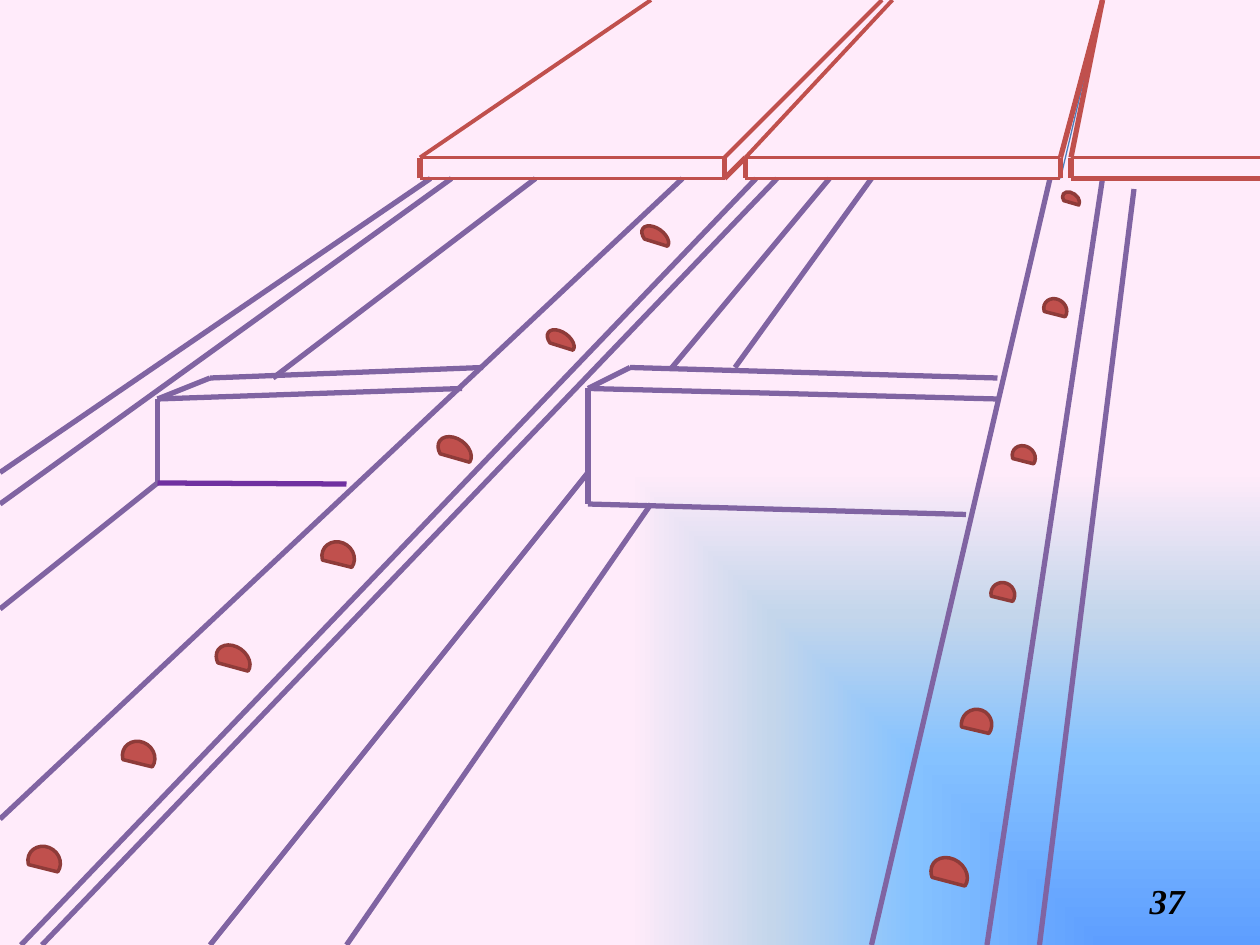
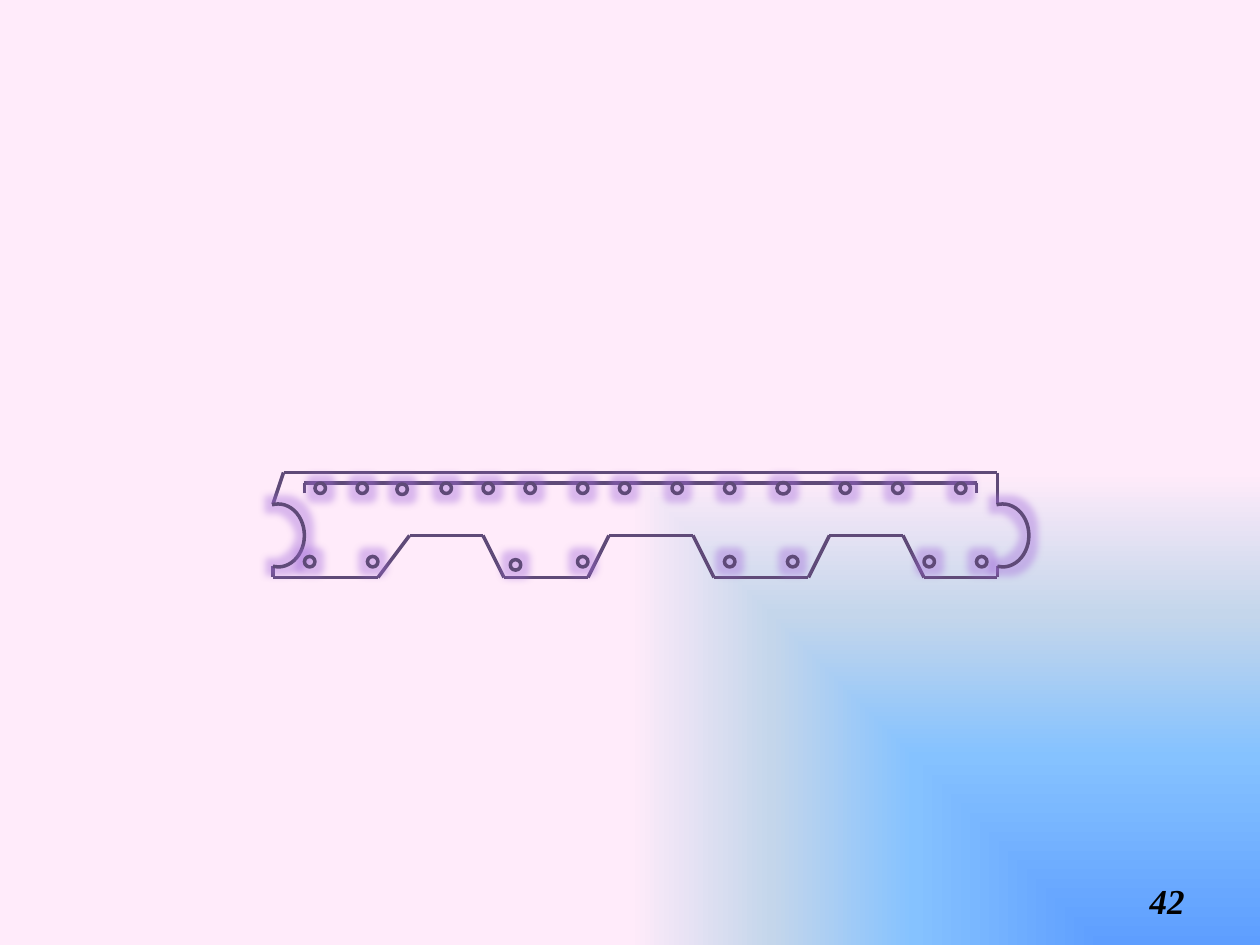
from dataclasses import dataclass
from typing import NamedTuple

from lxml.etree import SubElement
from pptx import Presentation
from pptx.dml.color import RGBColor
from pptx.enum.shapes import MSO_CONNECTOR, MSO_SHAPE
from pptx.enum.text import MSO_ANCHOR, PP_ALIGN
from pptx.oxml.ns import qn
from pptx.util import Inches, Pt

COLUMNS, ROWS = 120, 90
CELL = Inches(10) / COLUMNS


@dataclass(frozen=True)
class Theme:
    background: tuple = ((0, "5E9EFF"), (40, "85C2FF"), (70, "C4D6EB"), (100, "FFEBFA"))
    beam: str = "8064A2"
    beam_base: str = "7030A0"
    slab: str = "C0504D"
    gap: str = "4B7EBC"
    bolt_edge: str = "8E3B39"
    section: str = "5F4A78"
    glow: str = "A36BDB"
    text: str = "000000"
    font: str = "Times New Roman"
    number_size: float = 20
    heavy: float = 3
    medium: float = 2.25
    fine: float = 2
    hair: float = 0.75


THEME = Theme()


class Stroke(NamedTuple):
    """Joined straight lines through grid points (column, row)."""
    color: str
    width: float
    points: tuple


class Disc(NamedTuple):
    """Centre and size of a round part, in grid cells."""
    column: float
    row: float
    width: float = 1
    height: float = 1


def strokes(color: str, width: float, *paths: tuple) -> list[Stroke]:
    return [Stroke(color, width, points) for points in paths]


# Slabs resting on bolted beams
FLOOR = [
    *strokes(
        THEME.beam, THEME.heavy,
        # Beam edges running towards the viewer
        ((0, 58), (15, 46)), ((43, 17), (0, 48)), ((41, 17), (0, 45)),
        ((33, 90), (62, 48)), ((72, 17), (2, 90)), ((65, 17), (0, 78)),
        ((51, 17), (26, 36)), ((100, 17), (83, 90)), ((70, 35), (83, 17)),
        ((74, 17), (4, 90)), ((20, 90), (56, 45)), ((79, 17), (64, 35)),
        ((105, 17), (94, 90)), ((108, 18), (99, 90)),
        # Cross beams
        ((44, 37), (15, 38), (15, 46)), ((15, 38), (20, 36), (46, 35)),
        ((95, 38), (56, 37), (56, 48), (92, 49)), ((56, 37), (60, 35), (95, 36)),
    ),
    *strokes(THEME.beam_base, THEME.heavy, ((15, 46), (33, 46.1))),
    *strokes(
        THEME.slab, THEME.medium,
        ((40, 17), (69, 17)), ((62, 0), (40, 15), (69, 15), (84, 0)),
        ((71, 17), (101, 17)), ((85, 0), (71, 15), (101, 15)),
        ((102, 15), (120, 15)),
    ),
    *strokes(THEME.gap, THEME.hair, ((101, 17), (105, 0))),
    *strokes(
        THEME.slab, THEME.heavy,
        ((40, 17), (40, 15)), ((69, 15), (69, 17), (71, 15), (71, 17)),
        ((101, 17), (101, 15), (105, 0), (102, 15), (102, 17), (120, 17)),
    ),
]
BOLT_TURN = 125.9
BOLTS = [
    Disc(4.2, 82.1, 2.9, 3.2), Disc(13.2, 72.1, 2.9, 3.2), Disc(22.2, 62.9, 2.6, 3.5),
    Disc(32.2, 53.1, 2.9, 3.2), Disc(43.3, 43, 2.4, 3.5), Disc(53.4, 32.5, 1.7, 2.9),
    Disc(62.4, 22.6, 1.7, 2.9), Disc(90.4, 83.3, 3, 3.7), Disc(93, 69, 2.9, 2.9),
    Disc(95.5, 56.6, 2.2, 2.3), Disc(97.5, 43.5, 2, 2.3), Disc(100.5, 29.5, 2, 2.3),
    Disc(102, 19, 1.2, 1.8),
]

# Cross-section of one ribbed slab
SECTION = strokes(
    THEME.section, THEME.fine,
    ((26, 48), (27, 45), (95, 45), (95, 48)),
    ((26, 53.9), (26, 55), (36, 55), (39, 51), (46, 51), (48, 55), (56, 55),
     (58, 51), (66, 51), (68, 55), (77, 55), (79, 51), (86, 51), (88, 55),
     (95, 55), (95, 53.9)),
    ((29, 47), (29, 46), (93, 46), (93, 47)),
)
JOINTS = [Disc(column, 51, 5, 6) for column in (26.5, 95.5)]
JOINT_ANGLES = (155.23, 59.84)
TOP_BARS = (30.5, 34.5, 42.5, 46.5, 50.5, 55.5, 59.5, 64.5, 69.5, 80.5, 85.5, 91.5)
RIB_BARS = (29.5, 35.5, 55.5, 69.5, 75.5, 88.5, 93.5)
BARS = [
    *(Disc(column, 46.5) for column in TOP_BARS),
    *(Disc(column, 53.5) for column in RIB_BARS),
    Disc(38.3, 46.6), Disc(74.6, 46.5, 1.2, 1.1), Disc(49.1, 53.8),
]


def cells(count: float) -> int:
    return round(count * CELL)


def paint_background(master) -> None:
    """Gradient spreading from the bottom right corner."""
    master.background.fill.gradient()
    gradient = next(master.element.iter(qn("a:gradFill")))
    for child in list(gradient):
        gradient.remove(child)
    stops = SubElement(gradient, qn("a:gsLst"))
    for position, color in THEME.background:
        stop = SubElement(stops, qn("a:gs"), pos=str(position * 1000))
        SubElement(stop, qn("a:srgbClr"), val=color)
    spread = SubElement(gradient, qn("a:path"), path="rect")
    SubElement(spread, qn("a:fillToRect"), l="100000", t="100000")


def draw_strokes(page, items: list[Stroke]) -> None:
    for stroke in items:
        for start, end in zip(stroke.points, stroke.points[1:]):
            line = page.shapes.add_connector(
                MSO_CONNECTOR.STRAIGHT, *map(cells, (*start, *end)))
            line.line.color.rgb = RGBColor.from_string(stroke.color)
            line.line.width = Pt(stroke.width)
            SubElement(line.element.spPr, qn("a:effectLst"))


def draw_disc(page, kind, disc: Disc, *, edge: str, fill: str = "",
              turn: float = 0, angles: tuple = (), glow: float = 0):
    left, top = disc.column - disc.width / 2, disc.row - disc.height / 2
    shape = page.shapes.add_shape(
        kind, *map(cells, (left, top, disc.width, disc.height)))
    shape.rotation = turn
    for index, angle in enumerate(angles):
        shape.adjustments[index] = angle
    if fill:
        shape.fill.solid()
        shape.fill.fore_color.rgb = RGBColor.from_string(fill)
    else:
        shape.fill.background()
    shape.line.color.rgb = RGBColor.from_string(edge)
    shape.line.width = Pt(THEME.fine)
    shape.shadow.inherit = False
    if glow:
        effects = shape.element.spPr.find(qn("a:effectLst"))
        halo = SubElement(effects, qn("a:glow"), rad=str(Pt(glow)))
        color = SubElement(halo, qn("a:srgbClr"), val=THEME.glow)
        SubElement(color, qn("a:alpha"), val="40000")


def add_text(page, text: str, *, left: float, top: float, width: float,
             height: float, size: float, align) -> None:
    box = page.shapes.add_textbox(*map(cells, (left, top, width, height)))
    frame = box.text_frame
    frame.word_wrap = True
    frame.vertical_anchor = MSO_ANCHOR.MIDDLE
    para = frame.paragraphs[0]
    para.alignment = align
    span = para.add_run()
    span.text = text
    span.font.name = THEME.font
    span.font.size = Pt(size)
    span.font.bold = span.font.italic = True
    span.font.color.rgb = RGBColor.from_string(THEME.text)


def add_page(deck, number: int):
    page = deck.slides.add_slide(deck.slide_layouts.get_by_name("Blank"))
    add_text(page, str(number), left=86, top=83.4, width=28, height=4.8,
             size=THEME.number_size, align=PP_ALIGN.RIGHT)
    return page


def main() -> None:
    deck = Presentation()
    deck.slide_width, deck.slide_height = cells(COLUMNS), cells(ROWS)
    paint_background(deck.slide_master)

    # Floor in perspective
    floor = add_page(deck, 37)
    draw_strokes(floor, FLOOR)
    for bolt in BOLTS:
        draw_disc(floor, MSO_SHAPE.CHORD, bolt, edge=THEME.bolt_edge,
                  fill=THEME.slab, turn=BOLT_TURN)

    # Slab section with reinforcing bars
    section = add_page(deck, 42)
    draw_strokes(section, SECTION)
    for joint in JOINTS:
        draw_disc(section, MSO_SHAPE.ARC, joint, edge=THEME.section,
                  angles=JOINT_ANGLES, glow=8)
    for bar in BARS:
        draw_disc(section, MSO_SHAPE.OVAL, bar, edge=THEME.section, glow=8)

    deck.save("out.pptx")


if __name__ == "__main__":
    main()
